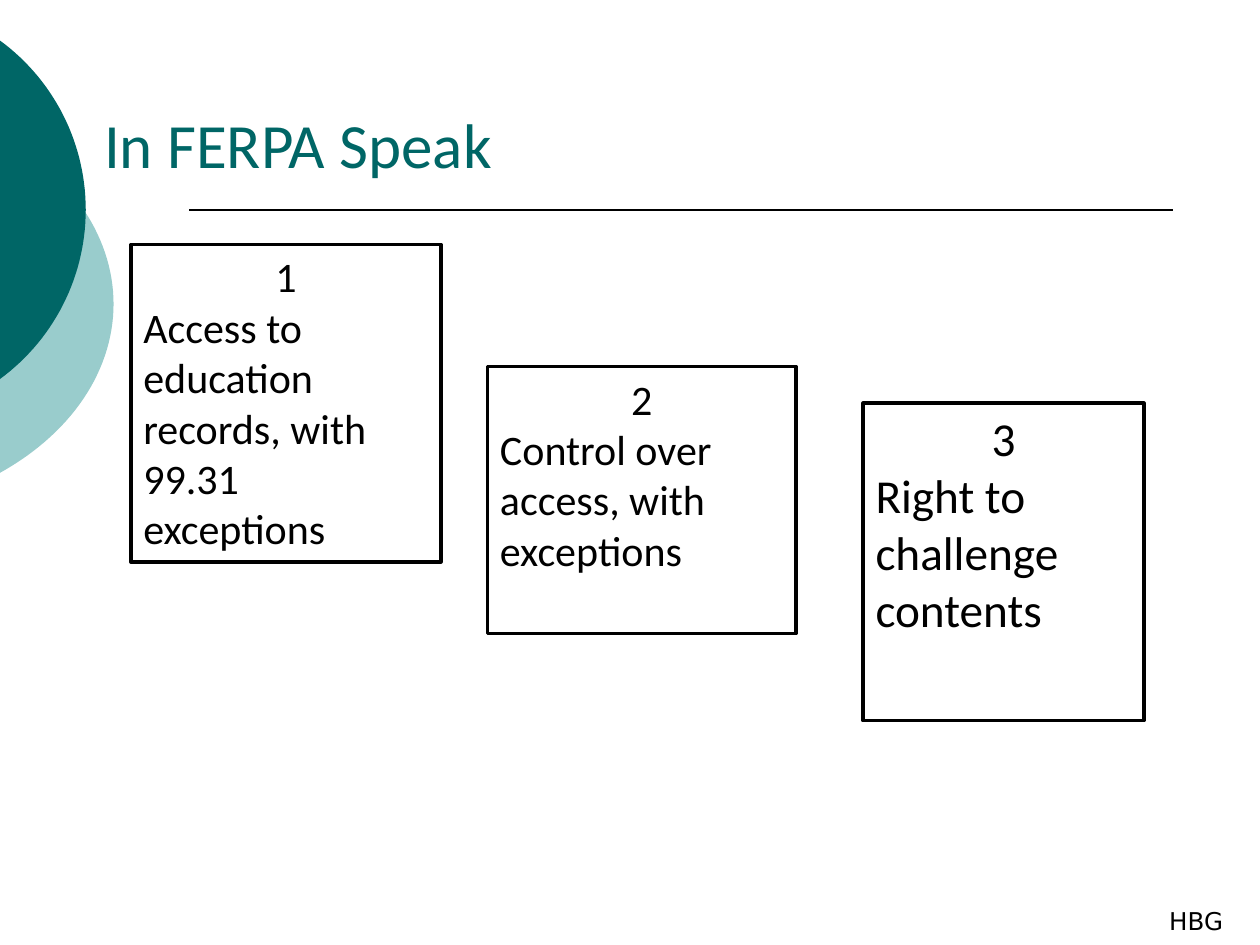
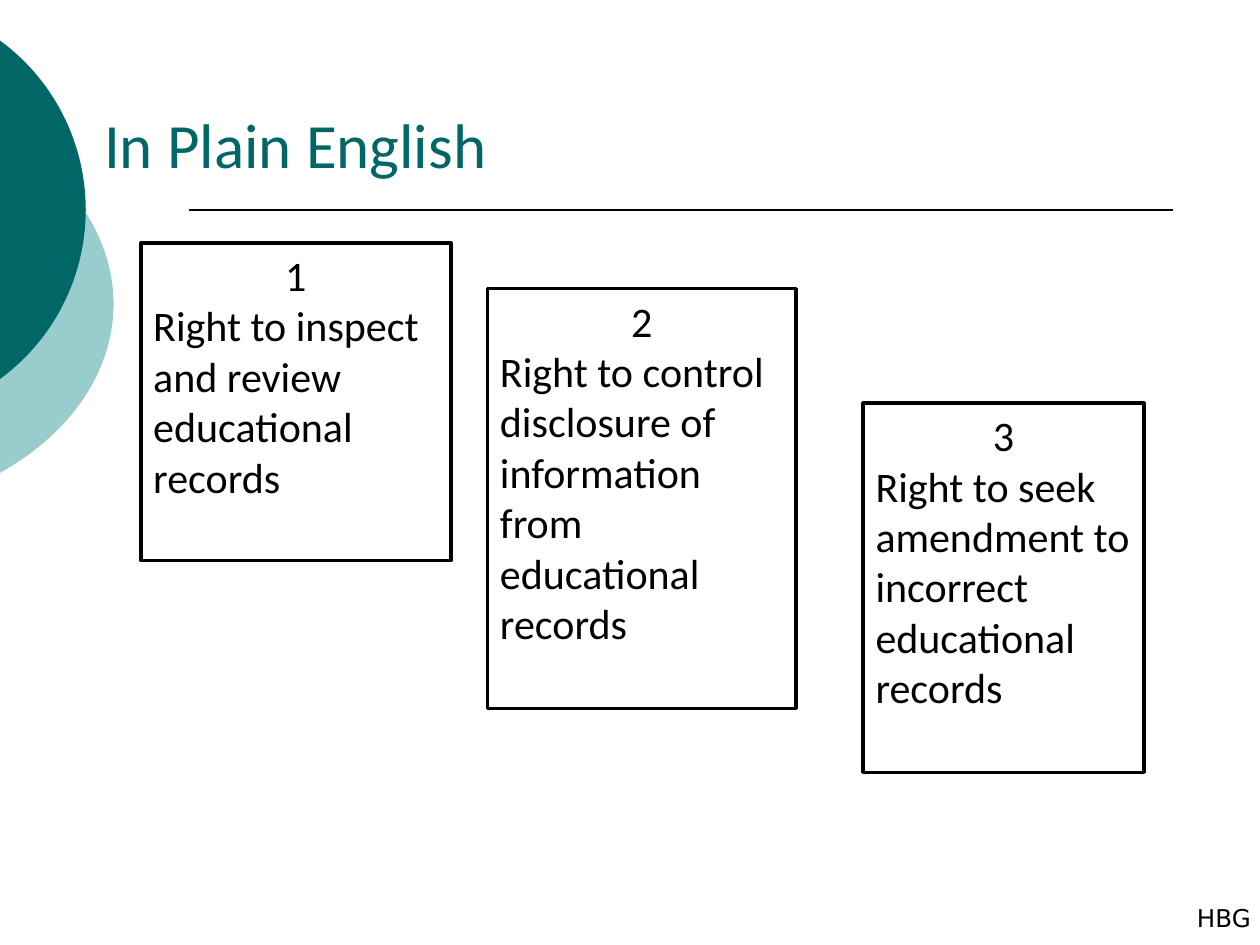
"""Build two slides that state three student record rights in legal and in plain words."""
from math import acos, cos, sin

from lxml.etree import SubElement
from pptx import Presentation
from pptx.dml.color import RGBColor
from pptx.enum.shapes import MSO_CONNECTOR as Connector, MSO_SHAPE as Shape
from pptx.enum.text import MSO_ANCHOR as Anchor, PP_ALIGN as Align
from pptx.oxml.ns import qn
from pptx.util import Cm, Pt

COLORS = {name: RGBColor.from_string(value) for name, value in {
    "teal": "006666", "pale teal": "99CCCC", "black": "000000"}.items()}
SLIDE_WIDTH, SLIDE_HEIGHT = 25.4, 19.05
ARC_STEPS = 60

DISCS = [
    ("pale teal", -3.35, 6.13, 5.64, 4.23),
    ("teal", -2.5, 4.23, 4.23, 4.23),
]
SLIDES = [
    ("In FERPA Speak", (23.32, 18.01), [
        ("Access to education records, with 99.31 exceptions", (2.64, 4.93, 6.25, 6.4), 24),
        ("Control over access, with exceptions", (9.83, 7.39, 6.22, 5.38), 24),
        ("Right to challenge contents", (17.4, 8.13, 5.66, 6.4), 27),
    ]),
    ("In Plain English", (23.88, 17.96), [
        ("Right to inspect and review educational records", (2.84, 4.9, 6.25, 6.4), 24),
        ("Right to control disclosure of information from educational records",
         (9.83, 5.82, 6.22, 8.46), 24),
        ("Right to seek amendment to incorrect educational records",
         (17.4, 8.13, 5.66, 7.44), 24),
    ]),
]


def write(shape, text, size, color="black", font="Calibri", anchor=Anchor.TOP,
          first_align=Align.LEFT, margins=(0.25, 0.13, 0.25, 0.13)):
    """Fill a shape with one paragraph for each line of text."""
    frame = shape.text_frame
    frame.word_wrap = True
    frame.vertical_anchor = anchor
    (frame.margin_left, frame.margin_top,
     frame.margin_right, frame.margin_bottom) = map(Cm, margins)
    frame.text = text
    for index, paragraph in enumerate(frame.paragraphs):
        paragraph.alignment = Align.LEFT if index else first_align
        paragraph.font.name = font
        paragraph.font.size = Pt(size)
        paragraph.font.color.rgb = COLORS[color]


presentation = Presentation()
presentation.slide_width = Cm(SLIDE_WIDTH)
presentation.slide_height = Cm(SLIDE_HEIGHT)

for title, (initials_left, initials_top), rights in SLIDES:
    slide = presentation.slides.add_slide(presentation.slide_layouts[6])

    for color, center_x, center_y, radius_x, radius_y in DISCS:
        edge_angle = acos(-center_x / radius_x)
        angles = [edge_angle * (2 * step / ARC_STEPS - 1) for step in range(ARC_STEPS + 1)]
        points = [(Cm(center_x + radius_x * cos(angle)), Cm(center_y + radius_y * sin(angle)))
                  for angle in angles]
        builder = slide.shapes.build_freeform(*points[0])
        builder.add_line_segments(points[1:], close=True)
        disc = builder.convert_to_shape()
        disc.shadow.inherit = False
        disc.fill.solid()
        disc.fill.fore_color.rgb = COLORS[color]
        disc.line.fill.background()

    rule = slide.shapes.add_connector(
        Connector.STRAIGHT, Cm(3.81), Cm(4.24), Cm(23.65), Cm(4.24))
    rule.line.color.rgb = COLORS["black"]
    rule.line.width = Pt(1)
    SubElement(rule.element.spPr, qn("a:effectLst"))

    heading = slide.shapes.add_textbox(Cm(1.85), Cm(1.04), Cm(22.73), Cm(2.74))
    write(heading, title, 36, color="teal", anchor=Anchor.BOTTOM)

    for number, (right, position, size) in enumerate(rights, start=1):
        box = slide.shapes.add_shape(Shape.RECTANGLE, *map(Cm, position))
        box.shadow.inherit = False
        box.fill.background()
        box.line.color.rgb = COLORS["black"]
        box.line.width = Pt(2)
        write(box, f"{number}\n{right}", size, first_align=Align.CENTER)

    initials = slide.shapes.add_textbox(
        Cm(initials_left), Cm(initials_top),
        Cm(SLIDE_WIDTH - initials_left), Cm(SLIDE_HEIGHT - initials_top))
    write(initials, "HBG", 14, font="DejaVu Sans", margins=(0.25, 0.25, 0, 0))

presentation.save("out.pptx")
